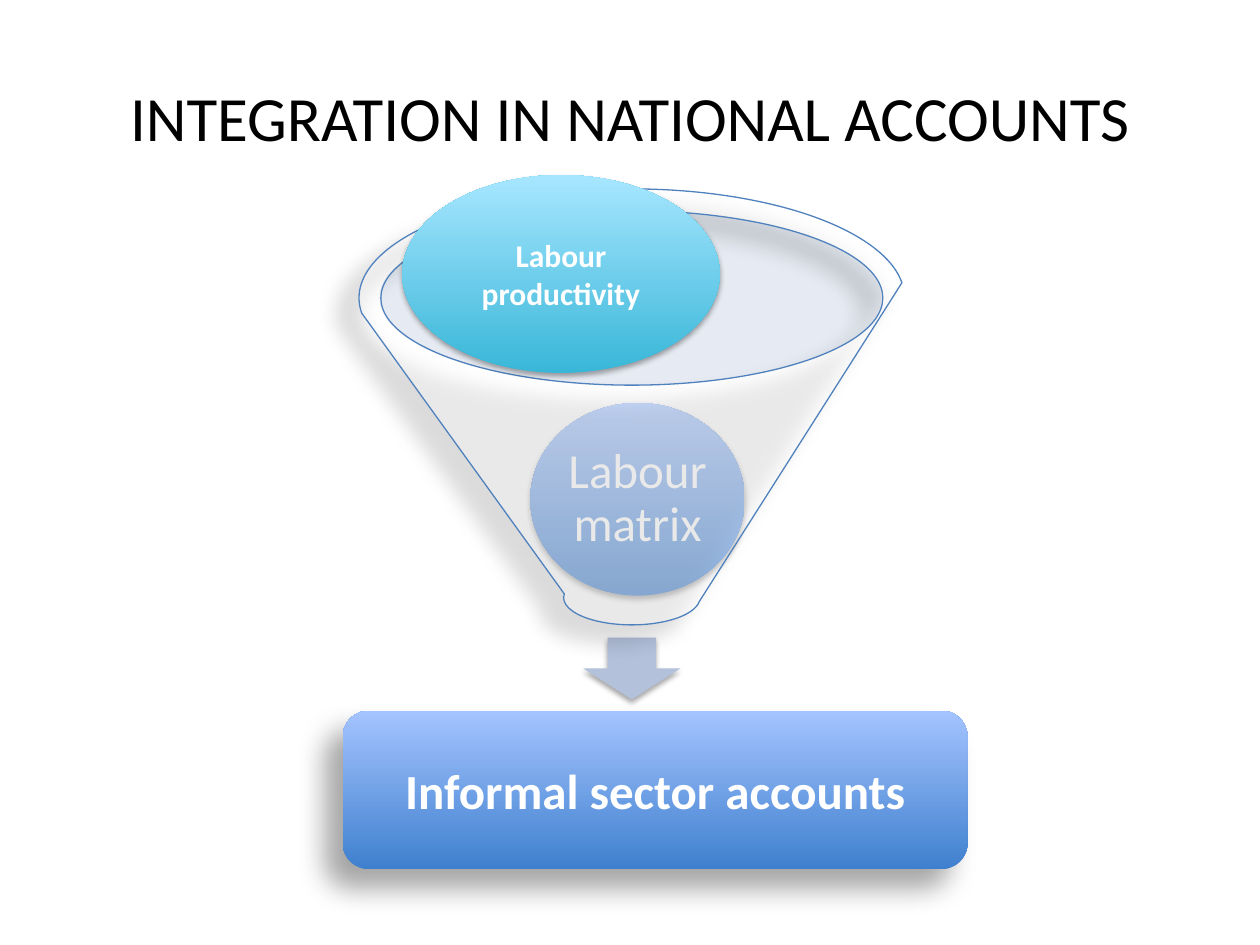
import pptx
import pptx.util
import pptx.dml.color
import pptx.enum.shapes
import pptx.enum.text
import pptx.oxml.ns
import lxml.etree

KIND = pptx.enum.shapes.MSO_SHAPE
FONT = "Calibri"
WIDE, HIGH = 10, 7.5
SOFT = (3.15, 1.81, 90)


def tint(code):
    return pptx.dml.color.RGBColor.from_string(code)


def node(parent, tag, **attrs):
    return lxml.etree.SubElement(parent, pptx.oxml.ns.qn(tag), attrs)


def part(box, left, top, width, height):
    x, y, w, h = box
    return x + left * w, y + top * h, width * w, height * h


def place(box):
    return [pptx.util.Inches(v) for v in box]


def shade(shape, blur, gap, angle):
    effect = shape.shadow._element.find(pptx.oxml.ns.qn("a:effectLst"))
    outer = node(effect, "a:outerShdw", blurRad=str(pptx.util.Pt(blur)),
                 dist=str(pptx.util.Pt(gap)), dir=str(angle * 60000),
                 rotWithShape="0")
    color = node(outer, "a:srgbClr", val="000000")
    node(color, "a:alpha", val="35000")


def form(slide, kind, box, fill, alpha=None, line=None, shadow=None):
    shape = slide.shapes.add_shape(kind, *place(box))
    shape.shadow.inherit = False
    if isinstance(fill, tuple):
        shape.fill.gradient()
        shape.fill.gradient_angle = 90
        for stop, code in zip(shape.fill.gradient_stops, fill):
            stop.color.rgb = tint(code)
    else:
        shape.fill.solid()
        shape.fill.fore_color.rgb = tint(fill)
    if alpha:
        solid = shape._element.spPr.find(pptx.oxml.ns.qn("a:solidFill"))
        node(solid[0], "a:alpha", val=str(alpha * 1000))
    if line:
        shape.line.color.rgb = tint(line)
        shape.line.width = pptx.util.Pt(0.75)
    else:
        shape.line.fill.background()
    if shadow:
        shade(shape, *shadow)
    return shape


def write(shape, text, size, color="FFFFFF", bold=False):
    frame = shape.text_frame
    frame.word_wrap = True
    frame.vertical_anchor = pptx.enum.text.MSO_ANCHOR.MIDDLE
    para = frame.paragraphs[0]
    para.text = text
    para.alignment = pptx.enum.text.PP_ALIGN.CENTER
    para.font.name = FONT
    para.font.size = pptx.util.Pt(size)
    para.font.bold = bold
    para.font.color.rgb = tint(color)
    return frame


def title(slide, box):
    text = slide.shapes.add_textbox(*place(box))
    write(text, "INTEGRATION IN NATIONAL ACCOUNTS", 36, "000000")


def funnel(slide, box):
    form(slide, KIND.OVAL, part(box, 0.037, 0.049, 0.921, 0.402),
         "C2CDE1", alpha=40)
    form(slide, KIND.DOWN_ARROW, part(box, 0.411, 1.029, 0.178, 0.142),
         "B3C1DB", shadow=SOFT)
    ball = part(box, 0.314, 0.491, 0.393, 0.442)
    form(slide, KIND.OVAL, ball, ("3F7FCE", "A4C4FF"), shadow=SOFT)
    label = slide.shapes.add_textbox(
        *place(part(ball, 0.147, 0.147, 0.706, 0.706)))
    frame = write(label, "Labour matrix", 28)
    frame.paragraphs[0].line_spacing = 0.9
    inset = pptx.util.Inches(0.04)
    frame.margin_left = frame.margin_right = inset
    frame.margin_top = frame.margin_bottom = inset
    form(slide, KIND.FUNNEL, box, "FFFFFF", alpha=40, line="4F81BD",
         shadow=(12, 15, 142))


def input_ball(slide, box):
    ball = form(slide, KIND.OVAL, box, ("39B7D8", "A7E6FF"), shadow=SOFT)
    write(ball, "Labour productivity", 18, bold=True)


def result(slide, box):
    bar = form(slide, KIND.ROUNDED_RECTANGLE, box, ("3F80CE", "A4C4FF"),
               shadow=(16, 15, 134))
    write(bar, "Informal sector accounts", 28, bold=True)


def main():
    deck = pptx.Presentation()
    deck.slide_width = pptx.util.Inches(WIDE)
    deck.slide_height = pptx.util.Inches(HIGH)
    slide = deck.slides.add_slide(deck.slide_layouts[6])
    page = (0, 0, WIDE, HIGH)
    cone = (2.85, 1.5, 4.33, 3.46)
    funnel(slide, cone)
    title(slide, part(page, 0.05, 0.04, 0.9, 1 / 6))
    input_ball(slide, part(cone, 0.079, -0.032, 0.582, 0.454))
    result(slide, part(page, 0.272, 0.752, 0.496, 0.168))
    deck.save("out.pptx")


if __name__ == "__main__":
    main()
